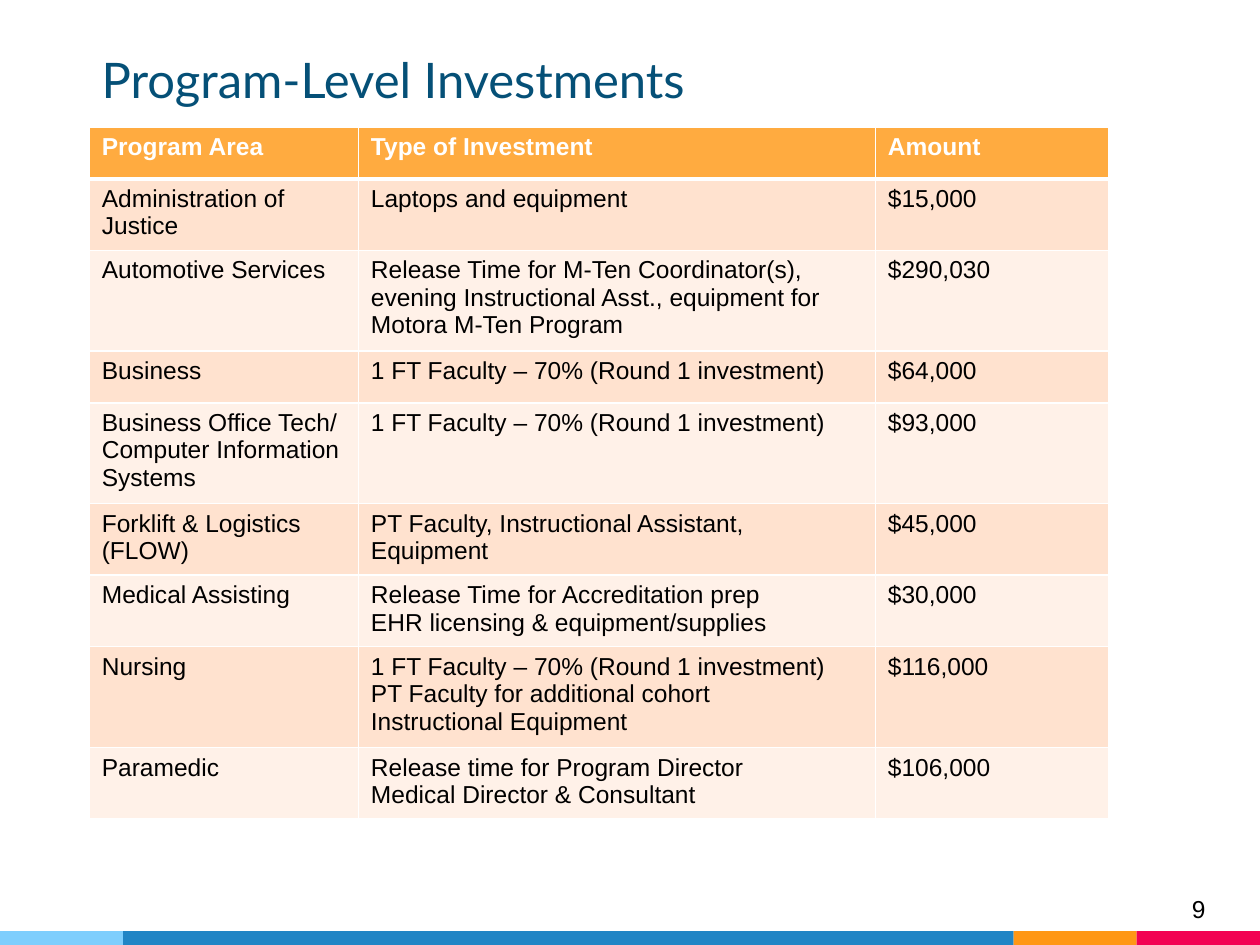
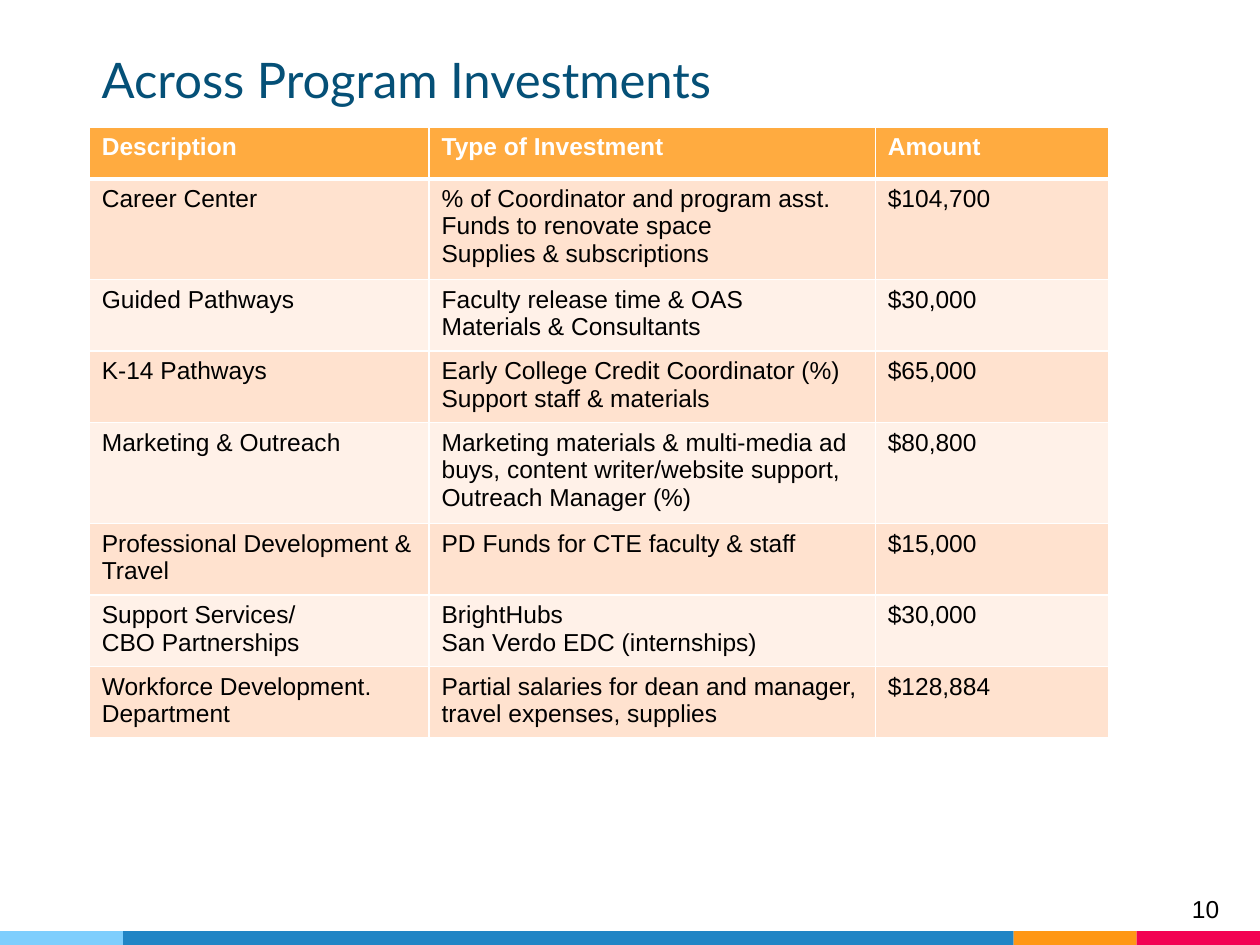
from dataclasses import dataclass

from lxml.etree import SubElement
from pptx import Presentation
from pptx.dml.color import RGBColor
from pptx.enum.shapes import MSO_SHAPE as Shape
from pptx.enum.text import MSO_ANCHOR as Anchor
from pptx.oxml.ns import qn
from pptx.util import Pt


@dataclass(frozen=True)
class Theme:
    # Colours
    title: str = "055077"
    text: str = "000000"
    white: str = "FFFFFF"
    header: str = "FFAB40"
    rows: tuple = ("FFE2CF", "FFF1E8")
    # Footer bands, left to right: colour and width
    bands: tuple = (("7ECEFD", 70.3), ("2185C5", 508.9),
                    ("FF9715", 70.4), ("F20253", 70.4))
    # Type
    title_font: str = "Lato"
    body_font: str = "Arial"
    title_size: float = 28
    body_size: float = 14
    # Table rules and row height
    rule: float = 1
    header_rule: float = 3
    row_height: float = 29.5


class DeckBuilder:
    width, height, margin = 720, 540, 51

    def __init__(self, theme):
        self.theme = theme
        self.deck = Presentation()
        self.deck.slide_width = Pt(self.width)
        self.deck.slide_height = Pt(self.height)
        self.page = None

    def add_page(self, title, number):
        theme = self.theme
        self.page = self.deck.slides.add_slide(self.deck.slide_layouts[6])
        self.bands()
        self.text_box(title, (self.margin, 21, 466.5, 98.5), Anchor.TOP,
                      theme.title_font, theme.title_size, theme.title)
        self.text_box(str(number), (674, 499, 43, 41), Anchor.MIDDLE,
                      theme.body_font, theme.body_size, theme.text)

    def bands(self):
        left, thickness = 0, 7.9
        for color, width in self.theme.bands:
            band = self.page.shapes.add_shape(
                Shape.RECTANGLE, Pt(left), Pt(self.height - thickness),
                Pt(width), Pt(thickness))
            band.shadow.inherit = False
            band.fill.solid()
            band.fill.fore_color.rgb = RGBColor.from_string(color)
            band.line.fill.background()
            left += width

    def add_text(self, frame, text, font, size, color, bold=False):
        for index, line in enumerate(text.split("\n")):
            para = frame.add_paragraph() if index else frame.paragraphs[0]
            span = para.add_run()
            span.text = line
            span.font.name = font
            span.font.size = Pt(size)
            span.font.bold = bold
            span.font.color.rgb = RGBColor.from_string(color)

    def text_box(self, text, area, anchor, font, size, color):
        box = self.page.shapes.add_textbox(*map(Pt, area))
        frame = box.text_frame
        frame.word_wrap = True
        frame.vertical_anchor = anchor
        frame.margin_left = frame.margin_right = Pt(7.2)
        frame.margin_top = frame.margin_bottom = Pt(7.2)
        self.add_text(frame, text, font, size, color)

    def borders(self, cell, top, bottom):
        properties = cell._tc.get_or_add_tcPr()
        rule = self.theme.rule
        for side, weight in (("L", rule), ("R", rule), ("T", top), ("B", bottom)):
            line = SubElement(properties, qn(f"a:ln{side}"), w=str(Pt(weight)))
            fill = SubElement(line, qn("a:solidFill"))
            SubElement(fill, qn("a:srgbClr"), val=self.theme.white)

    def table(self, widths, rows):
        theme = self.theme
        table = self.page.shapes.add_table(
            len(rows), len(widths), Pt(self.margin), Pt(72.7),
            Pt(sum(widths)), Pt(theme.row_height * len(rows))).table
        table.first_row = table.horz_banding = False
        for column, width in zip(table.columns, widths):
            column.width = Pt(width)
        for r, values in enumerate(rows):
            table.rows[r].height = Pt(theme.row_height)
            is_header = r == 0
            top = theme.header_rule if r == 1 else theme.rule
            bottom = theme.header_rule if is_header else theme.rule
            fill = theme.header if is_header else theme.rows[(r - 1) % 2]
            color = theme.white if is_header else theme.text
            for c, text in enumerate(values):
                cell = table.cell(r, c)
                self.borders(cell, top, bottom)
                cell.fill.solid()
                cell.fill.fore_color.rgb = RGBColor.from_string(fill)
                self.add_text(cell.text_frame, text, theme.body_font,
                              theme.body_size, color, is_header)


FACULTY = "1 FT Faculty – 70% (Round 1 investment)"

PROGRAM_LEVEL = [
    ("Program Area", "Type of Investment", "Amount"),
    ("Administration of Justice", "Laptops and equipment", "$15,000"),
    ("Automotive Services",
     "Release Time for M-Ten Coordinator(s), evening Instructional Asst., "
     "equipment for Motora M-Ten Program", "$290,030"),
    ("Business", FACULTY, "$64,000"),
    ("Business Office Tech/\nComputer Information Systems", FACULTY, "$93,000"),
    ("Forklift & Logistics (FLOW)",
     "PT Faculty, Instructional Assistant,\nEquipment", "$45,000"),
    ("Medical Assisting",
     "Release Time for Accreditation prep\nEHR licensing & equipment/supplies",
     "$30,000"),
    ("Nursing",
     FACULTY + "\nPT Faculty for additional cohort\nInstructional Equipment",
     "$116,000"),
    ("Paramedic",
     "Release time for Program Director\nMedical Director & Consultant",
     "$106,000"),
]

ACROSS_PROGRAM = [
    ("Description", "Type of Investment", "Amount"),
    ("Career Center",
     "% of Coordinator and program asst.\nFunds to renovate space\n"
     "Supplies & subscriptions", "$104,700"),
    ("Guided Pathways",
     "Faculty release time & OAS\nMaterials & Consultants", "$30,000"),
    ("K-14 Pathways",
     "Early College Credit Coordinator (%)\nSupport staff & materials",
     "$65,000"),
    ("Marketing & Outreach",
     "Marketing materials & multi-media ad buys, content writer/website "
     "support,\nOutreach Manager (%)", "$80,800"),
    ("Professional Development & Travel",
     "PD Funds for CTE faculty & staff", "$15,000"),
    ("Support Services/\nCBO Partnerships",
     "BrightHubs\nSan Verdo EDC (internships)", "$30,000"),
    ("Workforce Development. Department",
     "Partial salaries for dean and manager, travel expenses, supplies",
     "$128,884"),
]


def main():
    builder = DeckBuilder(Theme())

    # Investments by program
    builder.add_page("Program-Level Investments", 9)
    builder.table((153.8, 295.4, 133.2), PROGRAM_LEVEL)

    # Investments shared by programs
    builder.add_page("Across Program Investments", 10)
    builder.table((194.2, 255, 133.2), ACROSS_PROGRAM)

    builder.deck.save("out.pptx")


if __name__ == "__main__":
    main()
